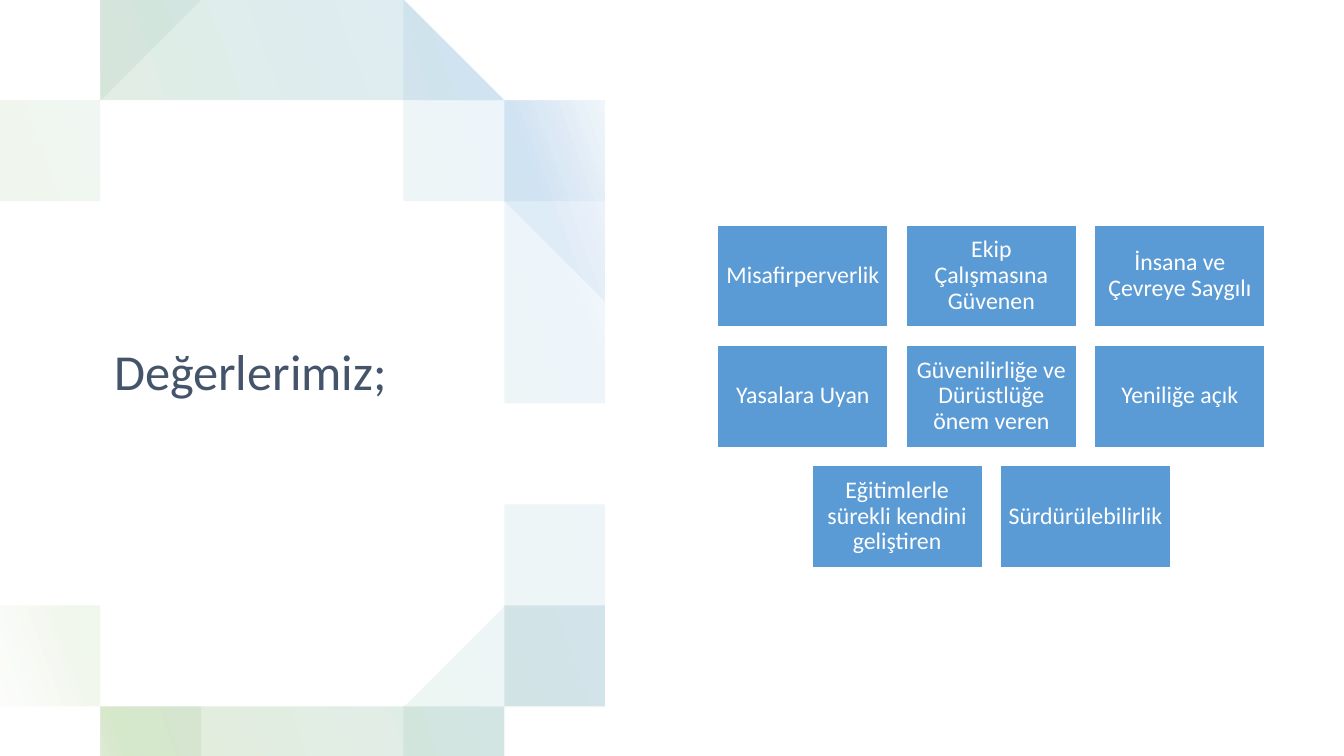
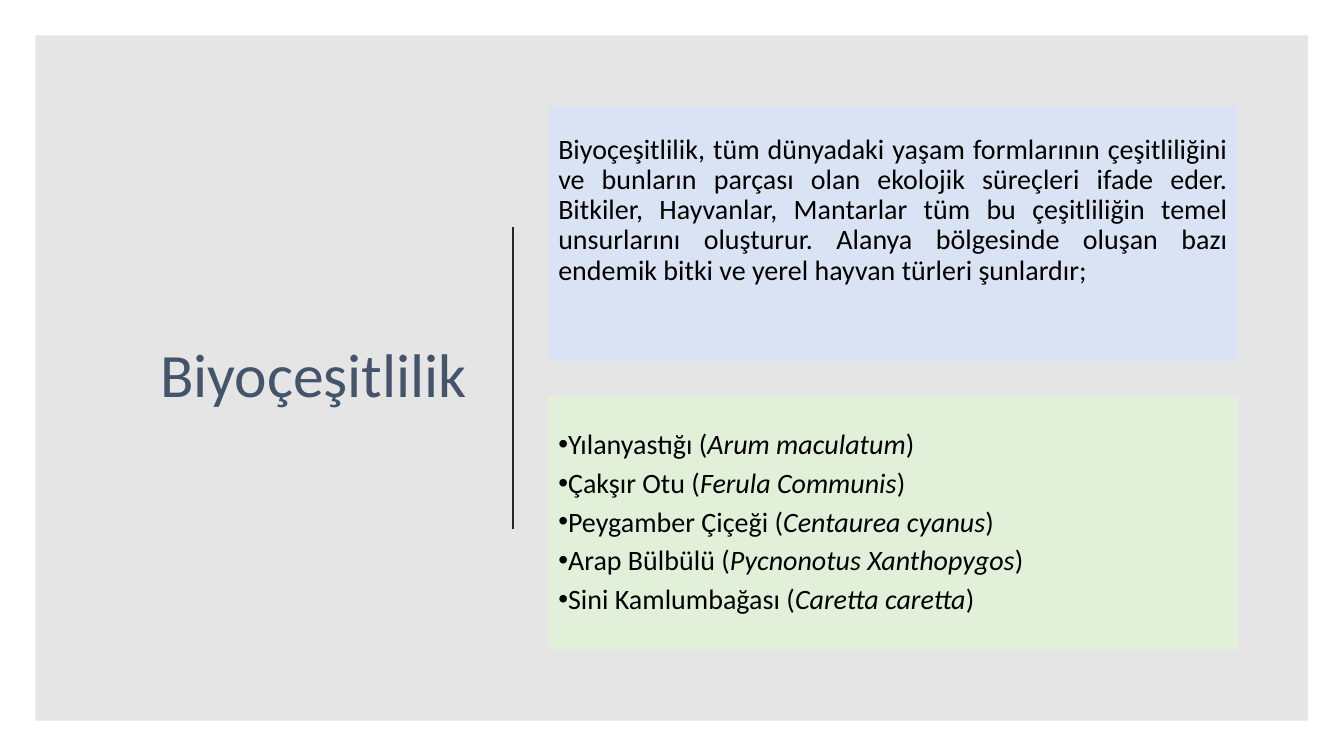
from dataclasses import dataclass
from typing import NamedTuple

from lxml.etree import SubElement
from pptx import Presentation
from pptx.dml.color import RGBColor
from pptx.enum.shapes import MSO_CONNECTOR, MSO_SHAPE
from pptx.enum.text import MSO_ANCHOR, PP_ALIGN
from pptx.oxml.ns import qn
from pptx.util import Cm, Pt

# Shared style
FONT = "Calibri"
WHITE = RGBColor(0xFF, 0xFF, 0xFF)
BLACK = RGBColor(0x00, 0x00, 0x00)
SLATE = RGBColor(0x44, 0x54, 0x6A)
BLUE = RGBColor(0x5B, 0x9B, 0xD5)
GREEN = RGBColor(0x70, 0xAD, 0x47)
CHARCOAL = RGBColor(0x26, 0x26, 0x26)
PALE_BLUE = RGBColor(0xDA, 0xE3, 0xF3)
PALE_GREEN = RGBColor(0xE2, 0xF0, 0xD9)
OPACITY = 10  # percent
LINE_SPACING = 0.9


class Box(NamedTuple):
    """Place of a shape, in centimetres."""
    left: float
    top: float
    width: float
    height: float

    def lengths(self) -> tuple:
        return tuple(Cm(value) for value in self)


@dataclass(frozen=True)
class Title:
    text: str
    box: Box
    size: int
    align: PP_ALIGN


@dataclass(frozen=True)
class Species:
    common: str
    latin: str


VALUES_TITLE = Title("Değerlerimiz;", Box(2.62, 7.24, 8.03, 4.37), 36, PP_ALIGN.LEFT)
VALUE_ROWS = (
    ("Misafirperverlik", "Ekip Çalışmasına Güvenen", "İnsana ve Çevreye Saygılı"),
    ("Yasalara Uyan", "Güvenilirliğe ve Dürüstlüğe önem veren", "Yeniliğe açık"),
    ("Eğitimlerle sürekli kendini geliştiren", "Sürdürülebilirlik"),
)
FIRST_CARD = Box(18.08, 5.66, 4.31, 2.59)
CARD_GAP = 0.44

DIVERSITY_TITLE = Title("Biyoçeşitlilik", Box(2.34, 2.67, 9.7, 13.69), 44, PP_ALIGN.RIGHT)
INTRO = (
    "Biyoçeşitlilik, tüm dünyadaki yaşam formlarının çeşitliliğini ve bunların "
    "parçası olan ekolojik süreçleri ifade eder. Bitkiler, Hayvanlar, Mantarlar tüm "
    "bu çeşitliliğin temel unsurlarını oluşturur. Alanya bölgesinde oluşan bazı "
    "endemik bitki ve yerel hayvan türleri şunlardır;"
)
SPECIES = (
    Species("Yılanyastığı", "Arum maculatum"),
    Species("Çakşır Otu", "Ferula Communis"),
    Species("Peygamber Çiçeği", "Centaurea cyanus"),
    Species("Arap Bülbülü", "Pycnonotus Xanthopygos"),
    Species("Sini Kamlumbağası", "Caretta caretta"),
)

# Rings share the outer edge; each reaches part of the way to the inner edge
RING_UNIT = Cm(2.54)
RING_FLOOR = 7.5
RING_ANGLE = 340
RING_STOPS = ((2, WHITE), (16, GREEN), (85, BLUE), (100, WHITE))
RING_DEPTHS = (0.55, 1, 0.25)
OUTER_EDGE = ((0, 1.05), (1.25, 0.3), (2.7, 0.06), (4.3, 0.43), (5.35, 1.2),
              (5.9, 2.2), (6.35, 3.7), (6.45, 4.9), (5.9, 6.1), (4.7, 7.5),
              (2.7, 7.6), (0.75, 7.5), (0, 6.7))
INNER_EDGE = ((0, 2.36), (1.2, 1.32), (2.6, 0.95), (3.9, 1.2), (4.75, 1.82),
              (5.16, 2.73), (5.55, 4.05), (5.58, 4.95), (5, 6), (3.9, 7),
              (2.7, 7.32), (1.5, 6.85), (0, 5.42))


def smooth(edge: tuple, steps: int = 10) -> list:
    """Points of a Catmull-Rom curve through the edge, cut at the floor."""
    padded = (edge[0], *edge, edge[-1])
    points = [edge[0]]
    for a, b, c, d in zip(padded, padded[1:], padded[2:], padded[3:]):
        for step in range(1, steps + 1):
            t = step / steps
            x, y = (
                q + t * (r - p) / 2 + t * t * (2 * p - 5 * q + 4 * r - s) / 2
                + t ** 3 * (3 * q - p - 3 * r + s) / 2
                for p, q, r, s in zip(a, b, c, d))
            points.append((max(x, 0), min(y, RING_FLOOR)))
    return points


def add_alpha(color_element) -> None:
    SubElement(color_element, qn("a:alpha"), val=str(OPACITY * 1000))


def style_paragraph(paragraph, size: int, color: RGBColor, align: PP_ALIGN) -> None:
    paragraph.alignment = align
    paragraph.line_spacing = LINE_SPACING
    for run in paragraph.runs:
        run.font.name = FONT
        run.font.size = Pt(size)
        run.font.color.rgb = color


def set_title(slide, title: Title) -> None:
    heading = slide.shapes.title
    heading.left, heading.top, heading.width, heading.height = title.box.lengths()
    frame = heading.text_frame
    frame.text = title.text
    frame.vertical_anchor = MSO_ANCHOR.MIDDLE
    style_paragraph(frame.paragraphs[0], title.size, SLATE, title.align)


def add_panel(slide, box: Box, color: RGBColor):
    panel = slide.shapes.add_shape(MSO_SHAPE.RECTANGLE, *box.lengths())
    panel.shadow.inherit = False
    panel.fill.solid()
    panel.fill.fore_color.rgb = color
    panel.line.fill.background()
    panel.text_frame.word_wrap = True
    panel.text_frame.vertical_anchor = MSO_ANCHOR.MIDDLE
    return panel


def add_ring(slide, depth: float) -> None:
    hole = tuple(
        tuple(o + depth * (i - o) for o, i in zip(outer, inner))
        for outer, inner in zip(OUTER_EDGE, INNER_EDGE))
    points = smooth(OUTER_EDGE) + smooth(hole)[::-1]
    builder = slide.shapes.build_freeform(*points[0], scale=RING_UNIT)
    builder.add_line_segments(points[1:], close=True)
    ring = builder.convert_to_shape()
    ring.shadow.inherit = False
    ring.line.fill.background()
    ring.fill.gradient()
    gradient = ring._element.spPr.find(qn("a:gradFill"))
    gradient.find(qn("a:lin")).set("ang", str(RING_ANGLE * 60000))
    stops = gradient.find(qn("a:gsLst"))
    for old_stop in list(stops):
        stops.remove(old_stop)
    for position, color in RING_STOPS:
        stop = SubElement(stops, qn("a:gs"), pos=str(position * 1000))
        add_alpha(SubElement(stop, qn("a:srgbClr"), val=str(color)))


def add_card(slide, box: Box, text: str) -> None:
    card = add_panel(slide, box, BLUE)
    card.line.color.rgb = WHITE
    card.line.width = Pt(1.5)
    frame = card.text_frame
    frame.margin_left = frame.margin_right = Cm(0.17)
    frame.margin_top = frame.margin_bottom = Cm(0.17)
    frame.text = text
    style_paragraph(frame.paragraphs[0], 17, WHITE, PP_ALIGN.CENTER)


def add_bullet(paragraph) -> None:
    properties = paragraph._p.get_or_add_pPr()
    properties.set("marL", "0")
    properties.set("indent", str(-Cm(0.64)))
    SubElement(properties, qn("a:buFont"), typeface="Arial")
    SubElement(properties, qn("a:buChar"), char="•")


def add_species(paragraph, species: Species) -> None:
    for text, italic in ((f"{species.common} (", False), (species.latin, True), (")", False)):
        run = paragraph.add_run()
        run.text = text
        run.font.italic = italic
    style_paragraph(paragraph, 20, BLACK, PP_ALIGN.LEFT)
    paragraph.space_after = Pt(6)
    add_bullet(paragraph)


def build_values(slide) -> None:
    set_title(slide, VALUES_TITLE)
    for depth in RING_DEPTHS:
        add_ring(slide, depth)
    # Cards, with a shorter row centred
    left, top, width, height = FIRST_CARD
    columns = max(len(row) for row in VALUE_ROWS)
    for row_number, row in enumerate(VALUE_ROWS):
        indent = (columns - len(row)) / 2
        for column, text in enumerate(row):
            x = left + (column + indent) * (width + CARD_GAP)
            y = top + row_number * (height + CARD_GAP)
            add_card(slide, Box(x, y, width, height), text)


def build_diversity(slide) -> None:
    # Grey backdrop behind the title
    backdrop = add_panel(slide, Box(0.89, 0.89, 32.08, 17.27), BLACK)
    add_alpha(backdrop._element.spPr.find(qn("a:solidFill"))[0])
    slide.shapes._spTree.insert(2, backdrop._element)
    set_title(slide, DIVERSITY_TITLE)

    # Divider
    divider = slide.shapes.add_connector(
        MSO_CONNECTOR.STRAIGHT, Cm(12.93), Cm(5.72), Cm(12.93), Cm(13.34))
    divider.line.color.rgb = CHARCOAL
    divider.line.width = Pt(1.5)
    SubElement(divider._element.spPr, qn("a:effectLst"))

    # Introduction
    intro = add_panel(slide, Box(13.82, 2.67, 17.37, 6.4), PALE_BLUE).text_frame
    intro.margin_bottom = Cm(1.25)
    intro.text = INTRO
    style_paragraph(intro.paragraphs[0], 20, BLACK, PP_ALIGN.JUSTIFY)
    intro.paragraphs[0].space_before = Pt(10)

    # Species list
    listing = add_panel(slide, Box(13.82, 9.98, 17.37, 6.4), PALE_GREEN).text_frame
    for number, species in enumerate(SPECIES):
        paragraph = listing.add_paragraph() if number else listing.paragraphs[0]
        add_species(paragraph, species)


def main() -> None:
    deck = Presentation()
    deck.slide_width, deck.slide_height = Cm(33.87), Cm(19.05)
    title_only = deck.slide_layouts[5]
    for build in (build_values, build_diversity):
        build(deck.slides.add_slide(title_only))
    deck.save("out.pptx")


if __name__ == "__main__":
    main()
